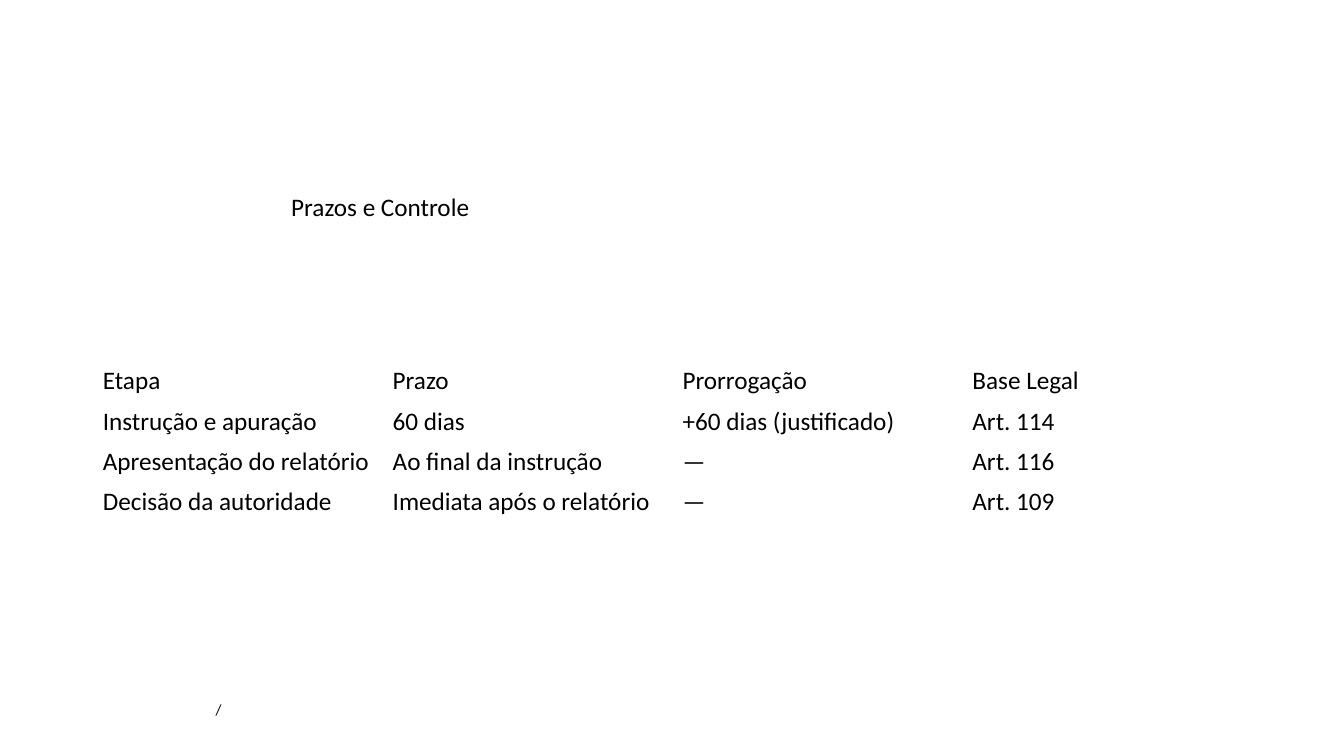
from pptx import Presentation
from pptx.dml.color import RGBColor
from pptx.enum.text import MSO_ANCHOR
from pptx.util import Inches, Pt

MIDDLE = MSO_ANCHOR.MIDDLE
COLORS = {"text": "000000"}
FONT = "Calibri"

TEXT_BOXES = [
    {"text": "/", "box": (2.04, 6.9, 9.25, 0.29), "size": 11},
    {"text": "Prazos e Controle", "box": (2.79, 1.85, 6.67, 0.4), "size": 18},
]
DEADLINES = [
    ("Etapa", "Prazo", "Prorrogação", "Base Legal"),
    ("Instrução e apuração", "60 dias", "+60 dias (justificado)", "Art. 114"),
    ("Apresentação do relatório", "Ao final da instrução", "—", "Art. 116"),
    ("Decisão da autoridade", "Imediata após o relatório", "—", "Art. 109"),
]
TABLE_LEFT, TABLE_TOP, TABLE_WIDTH, ROW_HEIGHT = 0.92, 3.58, 11.5, 0.4


def write_text(text_frame, text, size=18, color="text"):
    text_frame.word_wrap = True
    paragraph = text_frame.paragraphs[0]
    run = paragraph.add_run()
    run.text = text
    run.font.name = FONT
    run.font.size = Pt(size)
    run.font.bold = False
    run.font.color.rgb = RGBColor.from_string(COLORS[color])


def add_deadline_table(slide):
    row_count, column_count = len(DEADLINES), len(DEADLINES[0])
    bounds = (TABLE_LEFT, TABLE_TOP, TABLE_WIDTH, ROW_HEIGHT * row_count)
    table = slide.shapes.add_table(
        row_count, column_count, *map(Inches, bounds)
    ).table
    table.first_row = False
    table.horz_banding = False
    for row, values in zip(table.rows, DEADLINES):
        for cell, value in zip(row.cells, values):
            cell.fill.background()
            cell.vertical_anchor = MIDDLE
            write_text(cell.text_frame, value)


def main():
    presentation = Presentation()
    presentation.slide_width = Inches(13.33)
    presentation.slide_height = Inches(7.5)
    slide = presentation.slides.add_slide(presentation.slide_layouts[6])
    footer, title = TEXT_BOXES
    for item in (title, footer):
        shape = slide.shapes.add_textbox(*map(Inches, item["box"]))
        write_text(shape.text_frame, item["text"], size=item["size"])
    add_deadline_table(slide)
    presentation.save("out.pptx")


if __name__ == "__main__":
    main()
